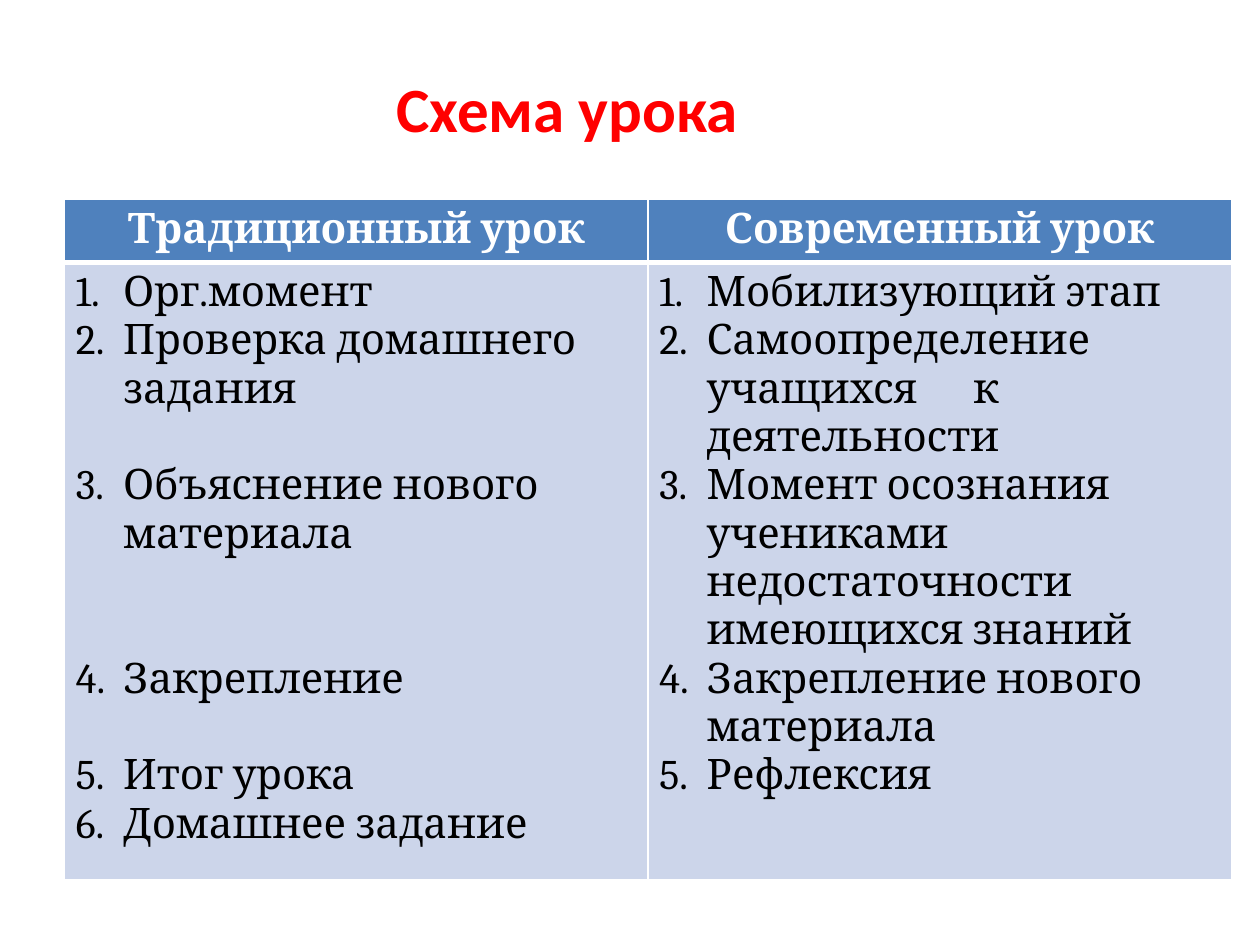
from lxml import etree
from pptx import Presentation
from pptx.dml.color import RGBColor
from pptx.enum.text import MSO_ANCHOR, PP_ALIGN
from pptx.oxml.ns import qn
from pptx.util import Pt

CENTER, LEFT = PP_ALIGN.CENTER, PP_ALIGN.LEFT
BOTTOM = MSO_ANCHOR.BOTTOM
LINE = 27.6
INDENT = 27


def rgb(value):
    return RGBColor.from_string(value)


def add_text(p, text, color, **font):
    r = p.add_run()
    r.text = text
    r.font.color.rgb = rgb(color)
    for name, value in font.items():
        setattr(r.font, name, value)


prs = Presentation()
prs.slide_width, prs.slide_height = Pt(720), Pt(540)
s = prs.slides.add_slide(prs.slide_layouts[5])

title = s.shapes.title
box = {"left": 0, "top": 26, "width": 648, "height": 57}
for name, value in box.items():
    setattr(title, name, Pt(value))
tf = title.text_frame
frame = {"margin_left": 0, "margin_top": Pt(3.6), "margin_right": 0,
         "margin_bottom": 0, "vertical_anchor": BOTTOM}
for name, value in frame.items():
    setattr(tf, name, value)
p = tf.paragraphs[0]
p.alignment = CENTER
add_text(p, "Схема урока", "FF0000", name="Calibri", size=Pt(36), bold=True)

columns = [
    ("Традиционный урок", [
        ("Орг.момент", 0),
        ("Проверка домашнего задания", 1),
        ("Объяснение нового материала", 2),
        ("Закрепление", 1),
        ("Итог урока", 0),
        ("Домашнее задание", 0),
    ]),
    ("Современный урок", [
        ("Мобилизующий этап", 0),
        ("Самоопределение учащихся\tк деятельности", 0),
        ("Момент осознания учениками недостаточности имеющихся знаний", 0),
        ("Закрепление нового материала", 0),
        ("Рефлексия", 0),
    ]),
]

table = s.shapes.add_table(2, 2, Pt(36.9), Pt(114), Pt(666.8), Pt(388.8)).table
for row, height in zip(table.rows, (36, 352.8)):
    row.height = Pt(height)

for col, (heading, steps) in enumerate(columns):
    table.columns[col].width = Pt(333.4)
    head, body = table.cell(0, col), table.cell(1, col)
    for cell, fill, thick in ((head, "4F81BD", "lnB"), (body, "CCD5EA", "lnT")):
        tcPr = cell._tc.get_or_add_tcPr()
        for side in ("lnL", "lnR", "lnT", "lnB"):
            width = Pt(3 if side == thick else 1)
            ln = etree.SubElement(tcPr, qn("a:" + side), w=str(width))
            solid = etree.SubElement(ln, qn("a:solidFill"))
            etree.SubElement(solid, qn("a:srgbClr"), val="FFFFFF")
        cell.fill.solid()
        cell.fill.fore_color.rgb = rgb(fill)
        cell.margin_left = cell.margin_right = Pt(6.5)
        cell.margin_top = cell.margin_bottom = Pt(3.6)

    p = head.text_frame.paragraphs[0]
    p.alignment = CENTER
    add_text(p, heading, "FFFFFF", name="Cambria", size=Pt(24), bold=True)

    tf = body.text_frame
    for i, (step, gap) in enumerate(steps):
        p = tf.add_paragraph() if i else tf.paragraphs[0]
        p.alignment = LEFT
        p.space_after = Pt(gap * LINE)
        pPr = p._p.get_or_add_pPr()
        pPr.set("marL", str(Pt(INDENT)))
        pPr.set("indent", str(-Pt(INDENT)))
        color = etree.SubElement(pPr, qn("a:buClr"))
        etree.SubElement(color, qn("a:srgbClr"), val="000000")
        etree.SubElement(pPr, qn("a:buAutoNum"), type="arabicPeriod")
        if "\t" in step:
            tabs = etree.SubElement(pPr, qn("a:tabLst"))
            etree.SubElement(tabs, qn("a:tab"), pos=str(Pt(179.5)), algn="l")
        add_text(p, step, "000000", name="Cambria", size=Pt(24), bold=False)

prs.save("out.pptx")
